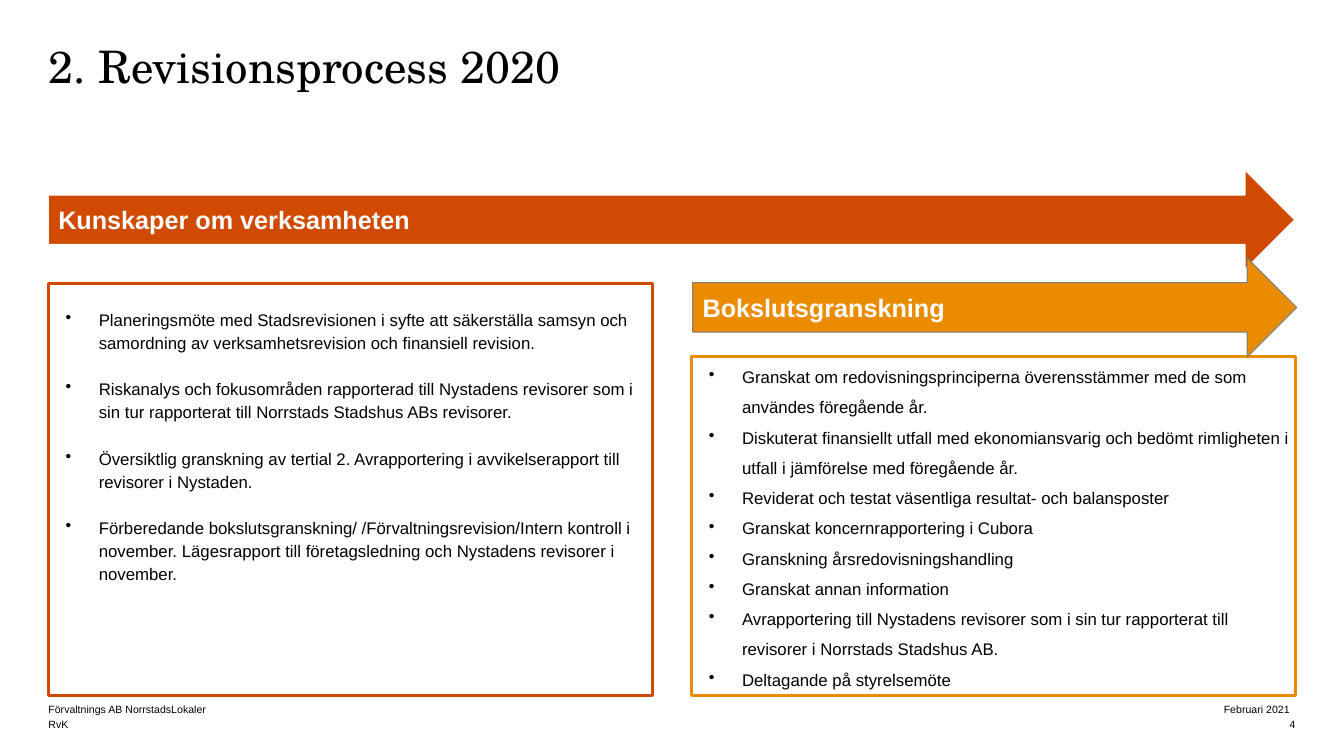
from dataclasses import dataclass

from lxml.etree import SubElement
from pptx import Presentation
from pptx.dml.color import RGBColor
from pptx.enum.shapes import MSO_SHAPE
from pptx.enum.text import MSO_ANCHOR, PP_ALIGN
from pptx.oxml.ns import qn
from pptx.util import Inches, Pt


@dataclass(frozen=True)
class Theme:
    heading_font: str = "TeX Gyre Schola"
    body_font: str = "Arial"
    title_size: float = 32
    arrow_size: float = 18
    body_size: float = 12
    footer_size: float = 7.5
    black: RGBColor = RGBColor(0x00, 0x00, 0x00)
    white: RGBColor = RGBColor(0xFF, 0xFF, 0xFF)
    grey: RGBColor = RGBColor(0x7D, 0x7D, 0x7D)
    red: RGBColor = RGBColor(0xD0, 0x4A, 0x02)
    amber: RGBColor = RGBColor(0xEB, 0x8C, 0x00)


class SlideBuilder:
    def __init__(self, page, theme):
        self.page = page
        self.theme = theme

    def prepare_frame(self, shape, anchor, inset=0.0):
        frame = shape.text_frame
        frame.word_wrap = True
        frame.vertical_anchor = anchor
        frame.margin_left = frame.margin_right = Inches(inset)
        frame.margin_top = frame.margin_bottom = Inches(inset)
        return frame

    def style(self, paragraph, size, color, font=None, bold=False):
        paragraph.font.name = font or self.theme.body_font
        paragraph.font.size = Pt(size)
        paragraph.font.color.rgb = color
        paragraph.font.bold = bold

    def title(self, text, left, top, width, height):
        box = self.page.shapes.add_textbox(*map(Inches, (left, top, width, height)))
        paragraph = self.prepare_frame(box, MSO_ANCHOR.TOP).paragraphs[0]
        paragraph.text = text
        paragraph.line_spacing = 0.85
        self.style(paragraph, self.theme.title_size, self.theme.black, self.theme.heading_font)

    def footer(self, text, left, top, width, align):
        box = self.page.shapes.add_textbox(*map(Inches, (left, top, width, 0.15)))
        paragraph = self.prepare_frame(box, MSO_ANCHOR.BOTTOM).paragraphs[0]
        paragraph.text = text
        paragraph.alignment = align
        self.style(paragraph, self.theme.footer_size, self.theme.black)

    def outlined_shape(self, kind, position, line_color, line_width):
        shape = self.page.shapes.add_shape(kind, *map(Inches, position))
        shape.shadow.inherit = False
        shape.line.color.rgb = line_color
        shape.line.width = Pt(line_width)
        return shape

    def arrow(self, text, left, top, width, fill, line):
        shape = self.outlined_shape(
            MSO_SHAPE.RIGHT_ARROW, (left, top, width, 0.98), line, 0.75)
        shape.fill.solid()
        shape.fill.fore_color.rgb = fill
        paragraph = self.prepare_frame(shape, MSO_ANCHOR.MIDDLE, 0.1).paragraphs[0]
        paragraph.text = text
        paragraph.alignment = PP_ALIGN.LEFT
        self.style(paragraph, self.theme.arrow_size, self.theme.white, bold=True)

    def bullet_panel(self, items, position, color, line_spacing,
                     top_inset=0.0, first_gap=0.0, gap=0.0):
        """Draw a framed bullet list; gaps are points before each item."""
        shape = self.outlined_shape(MSO_SHAPE.RECTANGLE, position, color, 2.25)
        shape.fill.background()
        frame = self.prepare_frame(shape, MSO_ANCHOR.TOP)
        frame.margin_top = Inches(top_inset)
        for index, item in enumerate(items):
            paragraph = frame.add_paragraph() if index else frame.paragraphs[0]
            paragraph.text = item
            paragraph.alignment = PP_ALIGN.LEFT
            paragraph.line_spacing = line_spacing
            paragraph.space_before = Pt(gap if index else first_gap)
            self.style(paragraph, self.theme.body_size, self.theme.black)
            self.add_bullet(paragraph)

    def add_bullet(self, paragraph):
        properties = paragraph._p.get_or_add_pPr()
        properties.set("marL", str(Inches(0.5)))
        properties.set("indent", str(Inches(-0.33)))
        bullet = SubElement(properties, qn("a:buChar"))
        bullet.set("char", "•")
        properties.remove(bullet)
        properties.find(qn("a:defRPr")).addprevious(bullet)


PLANNING = [
    "Planeringsmöte med Stadsrevisionen i syfte att säkerställa samsyn och "
    "samordning av verksamhetsrevision och finansiell revision.",
    "Riskanalys och fokusområden rapporterad till Nystadens revisorer som i "
    "sin tur rapporterat till Norrstads Stadshus ABs revisorer.",
    "Översiktlig granskning av tertial 2. Avrapportering i avvikelserapport till "
    "revisorer i Nystaden.",
    "Förberedande bokslutsgranskning/ /Förvaltningsrevision/Intern kontroll i "
    "november. Lägesrapport till företagsledning och Nystadens revisorer i november.",
]
CLOSING = [
    "Granskat om redovisningsprinciperna överensstämmer med de som "
    "användes föregående år.",
    "Diskuterat finansiellt utfall med ekonomiansvarig och bedömt rimligheten i "
    "utfall i jämförelse med föregående år.",
    "Reviderat och testat väsentliga resultat- och balansposter",
    "Granskat koncernrapportering i Cubora",
    "Granskning årsredovisningshandling",
    "Granskat annan information",
    "Avrapportering till Nystadens revisorer som i sin tur rapporterat till "
    "revisorer i Norrstads Stadshus AB.",
    "Deltagande på styrelsemöte",
]


def main():
    deck = Presentation()
    deck.slide_width, deck.slide_height = Inches(13.33), Inches(7.5)
    theme = Theme()
    builder = SlideBuilder(deck.slides.add_slide(deck.slide_layouts[6]), theme)
    left, right, column, full = 0.48, 6.86, 5.99, 12.36

    builder.title("2. Revisionsprocess 2020", left, 0.47, full, 0.63)
    builder.bullet_panel(PLANNING, (left, 2.81, column, 4.09), theme.red, 1.15,
                         top_inset=0.23, gap=16.5)
    builder.bullet_panel(CLOSING, (right, 3.54, column, 3.36), theme.amber, 1.5,
                         first_gap=3)
    builder.arrow("Kunskaper om verksamheten", left, 1.69, full, theme.red, theme.white)
    builder.arrow("Bokslutsgranskning", right + 0.01, 2.56, column, theme.amber, theme.grey)

    footers = [("Förvaltnings AB NorrstadsLokaler", "Februari 2021  "), ("RvK", "4")]
    for row, (left_text, right_text) in enumerate(footers):
        top = 6.95 + 0.15 * row
        builder.footer(left_text, left, top, column, PP_ALIGN.LEFT)
        builder.footer(right_text, 8.99, top, 3.86, PP_ALIGN.RIGHT)

    deck.save("out.pptx")


if __name__ == "__main__":
    main()
